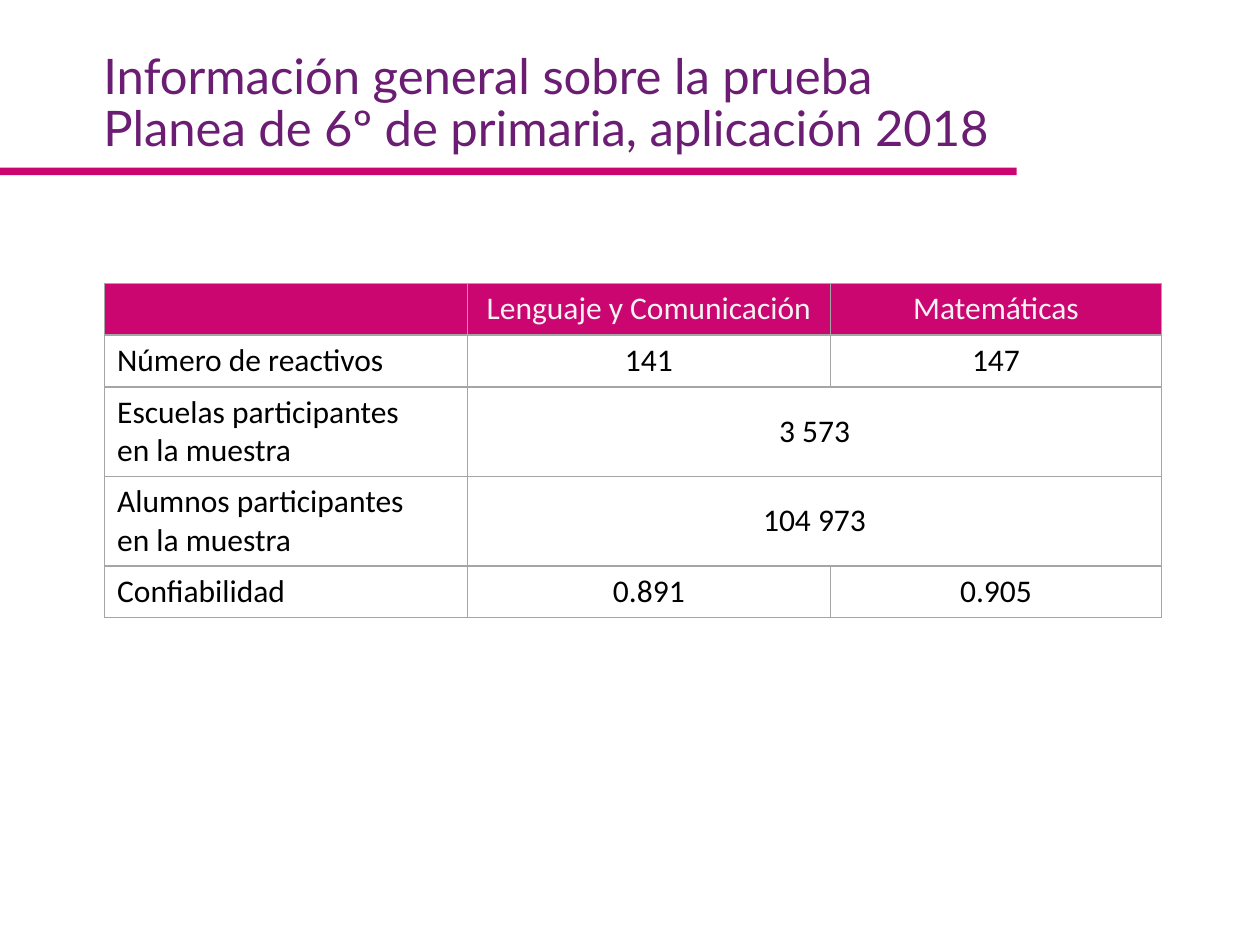
from copy import deepcopy
from dataclasses import dataclass

from lxml.etree import SubElement
from pptx import Presentation
from pptx.dml.color import RGBColor
from pptx.enum.shapes import MSO_SHAPE as Shape
from pptx.enum.text import MSO_ANCHOR as Anchor, MSO_AUTO_SIZE as AutoSize, PP_ALIGN as Align
from pptx.oxml.ns import qn
from pptx.util import Inches, Pt


@dataclass(frozen=True)
class Theme:
    magenta: str = "CC0671"
    purple: str = "6B1C73"
    pale: str = "F2F2F2"
    white: str = "FFFFFF"
    black: str = "000000"
    grid: str = "A5A5A5"
    title_font: str = "Lato"
    table_font: str = "Calibri"
    title_size: int = 28
    table_size: int = 18


@dataclass(frozen=True)
class Row:
    label: str
    values: tuple[str, ...]  # a single value spans both subjects
    height: float = 0.41
    header: bool = False


THEME = Theme()
TITLE = "Información general sobre la prueba \vPlanea de 6º de primaria, aplicación 2018"
COLUMNS = (2.88, 2.88, 2.63)
ROWS = (
    Row("", ("Lenguaje y Comunicación", "Matemáticas"), header=True),
    Row("Número de reactivos", ("141", "147")),
    Row("Escuelas participantes \ven la muestra", ("3 573",), height=0.71),
    Row("Alumnos participantes \ven la muestra", ("104 973",), height=0.71),
    Row("Confiabilidad", ("0.891", "0.905")),
)


def write_text(frame, text: str, *, font: str, size: int, color: str,
               align=Align.LEFT, spacing: float = 1.0) -> None:
    """Fill a text frame with one paragraph; line breaks share its format."""
    para = frame.paragraphs[0]
    para.text = text
    para.alignment = align
    para.line_spacing = spacing
    for span in para.runs:
        span.font.name = font
        span.font.size = Pt(size)
        span.font.bold = False
        span.font.color.rgb = RGBColor.from_string(color)
    for line_break in para._p.findall(qn("a:br")):
        line_break.insert(0, deepcopy(para.runs[0].font._element))


def draw_borders(cell, color: str, width: float = 1) -> None:
    properties = cell._tc.get_or_add_tcPr()
    for index, side in enumerate(("lnL", "lnR", "lnT", "lnB")):
        line = properties.makeelement(qn(f"a:{side}"), {"w": str(Pt(width))})
        fill = SubElement(line, qn("a:solidFill"))
        SubElement(fill, qn("a:srgbClr"), val=color)
        properties.insert(index, line)


def draw_table(page, left: float, top: float) -> None:
    table = page.shapes.add_table(
        len(ROWS), len(COLUMNS), Inches(left), Inches(top),
        Inches(sum(COLUMNS)), Inches(sum(row.height for row in ROWS))).table
    for column, width in zip(table.columns, COLUMNS):
        column.width = Inches(width)
    for index, row in enumerate(ROWS):
        table.rows[index].height = Inches(row.height)
        if len(row.values) == 1:
            table.cell(index, 1).merge(table.cell(index, 2))
        for position in range(len(COLUMNS)):
            cell = table.cell(index, position)
            cell.fill.solid()
            cell.fill.fore_color.rgb = RGBColor.from_string(
                THEME.magenta if row.header else THEME.white)
            draw_borders(cell, THEME.grid)
        for position, text in enumerate((row.label, *row.values)):
            cell = table.cell(index, position)
            is_value = position > 0
            if is_value and not row.header:
                cell.vertical_anchor = Anchor.MIDDLE
            write_text(cell.text_frame, text, font=THEME.table_font,
                       size=THEME.table_size,
                       color=THEME.pale if row.header else THEME.black,
                       align=Align.CENTER if is_value else Align.LEFT)


def draw_title(page) -> None:
    title = page.shapes.title
    title.left, title.top = Inches(0.72), Inches(0.36)
    title.width, title.height = Inches(8.62), Inches(1.03)
    title.text_frame.word_wrap = True
    title.text_frame.auto_size = AutoSize.NONE
    title.text_frame.vertical_anchor = Anchor.TOP
    write_text(title.text_frame, TITLE, font=THEME.title_font,
               size=THEME.title_size, color=THEME.purple, spacing=0.9)


def draw_rule(page) -> None:
    rule = page.shapes.add_shape(
        Shape.RECTANGLE, 0, Inches(1.33), Inches(8.07), Inches(0.06))
    rule.shadow.inherit = False
    rule.fill.solid()
    rule.fill.fore_color.rgb = RGBColor.from_string(THEME.magenta)
    rule.line.fill.background()


def main() -> None:
    deck = Presentation()
    deck.slide_width, deck.slide_height = Inches(10), Inches(7.5)
    page = deck.slides.add_slide(deck.slide_layouts.get_by_name("Title Only"))
    # Heading, results table and the rule under the heading
    draw_title(page)
    draw_table(page, left=0.83, top=2.25)
    draw_rule(page)
    deck.save("out.pptx")


if __name__ == "__main__":
    main()
